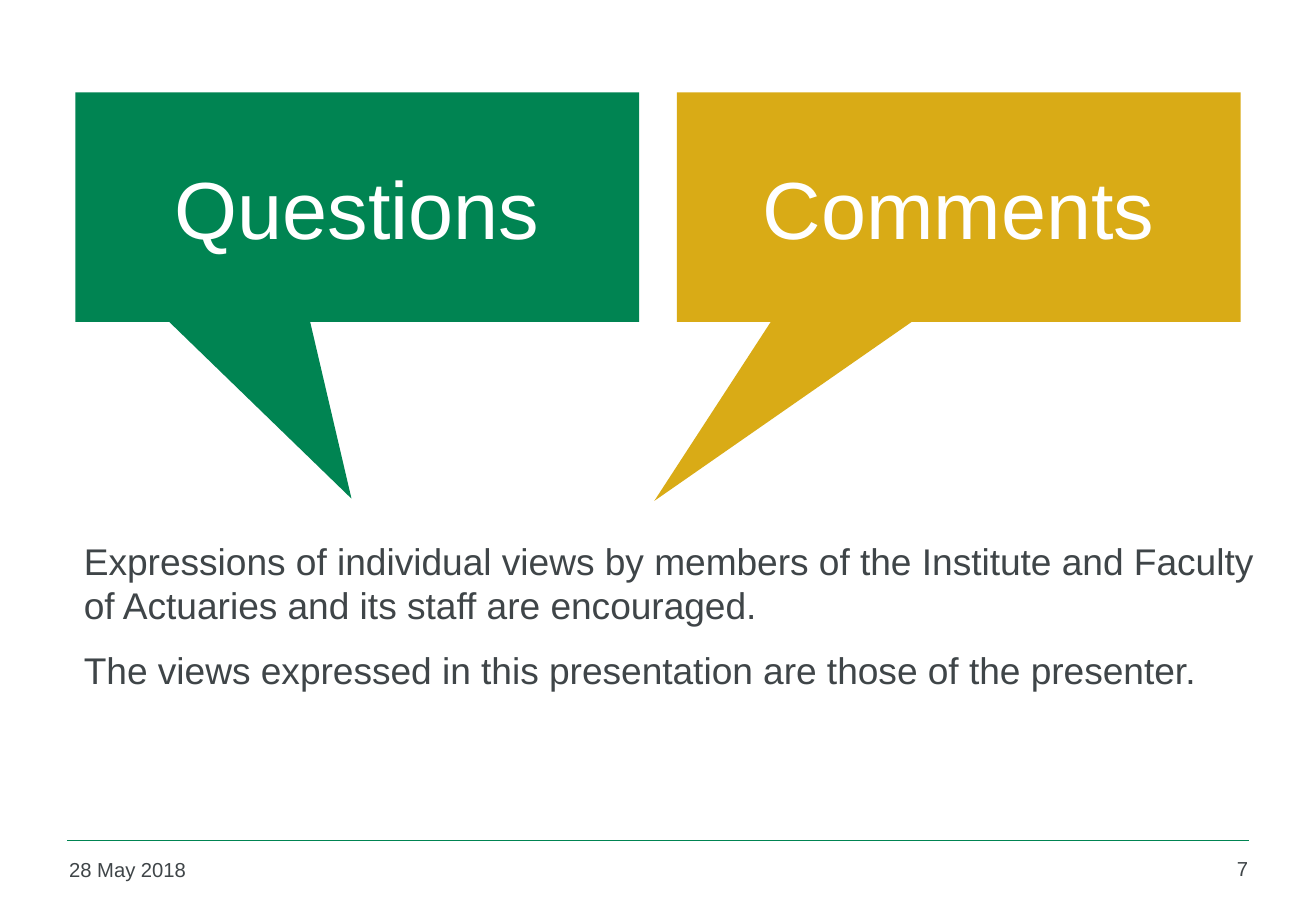
from dataclasses import dataclass

import lxml.etree
import pptx
import pptx.dml.color
import pptx.enum.shapes
import pptx.enum.text
import pptx.oxml.ns
import pptx.presentation
import pptx.shapes.base
import pptx.slide
import pptx.text.text
import pptx.util

RGBColor = pptx.dml.color.RGBColor
ALIGN = pptx.enum.text.PP_ALIGN
ANCHOR = pptx.enum.text.MSO_ANCHOR
GREEN = RGBColor(0x00, 0x84, 0x52)
GOLD = RGBColor(0xD9, 0xAB, 0x16)
GREY = RGBColor(0x3F, 0x45, 0x48)
WHITE = RGBColor(0xFF, 0xFF, 0xFF)
FONT = "Arial"

WIDTH = pptx.util.Inches(10.83)
HEIGHT = pptx.util.Inches(7.5)

DISCLAIMER = (
    "Expressions of individual views by members of the Institute and Faculty "
    "of Actuaries and its staff are encouraged.",
    "The views expressed in this presentation are those of the presenter.",
)


@dataclass(frozen=True)
class Box:
    """A rectangle in percent of the slide's width and height."""
    left: float
    top: float
    width: float
    height: float

    def inset(self, dx: float, dy: float) -> "Box":
        return Box(self.left + dx, self.top + dy,
                   self.width - 2 * dx, self.height - 2 * dy)

    def emu(self) -> tuple[int, int, int, int]:
        return (share(self.left, WIDTH), share(self.top, HEIGHT),
                share(self.width, WIDTH), share(self.height, HEIGHT))


@dataclass(frozen=True)
class Callout:
    """A speech bubble; tip is measured from its centre in its own size."""
    label: str
    fill: RGBColor
    tip: tuple[float, float]


@dataclass(frozen=True)
class Footer:
    text: str
    box: Box
    align: ALIGN


CALLOUTS = (
    Callout("Questions", GREEN, (-0.01, 1.27)),
    Callout("Comments", GOLD, (-0.54, 1.28)),
)
CALLOUT_LEFT, CALLOUT_TOP = 5.72, 10.13
CALLOUT_WIDTH, CALLOUT_HEIGHT = 42.84, 25.2
CALLOUT_PITCH = 45.71

FOOTERS = (
    Footer("28 May 2018", Box(4.34, 93.47, 22.07, 4.8), ALIGN.LEFT),
    Footer("7", Box(88.64, 93.33, 7.11, 4.93), ALIGN.RIGHT),
)
BODY_BOX = Box(5.45, 58.4, 91.87, 34.4)
RULE_LEFT, RULE_RIGHT, RULE_TOP = 5.08, 94.92, 92.27


def share(percent: float, length: int) -> int:
    return round(percent / 100 * length)


def place(sp: pptx.shapes.base.BaseShape, box: Box) -> None:
    sp.left, sp.top, sp.width, sp.height = box.emu()


def format_text(tf: pptx.text.text.TextFrame, size: float, color: RGBColor,
                align: ALIGN, anchor: ANCHOR) -> None:
    tf.word_wrap = True
    tf.auto_size = pptx.enum.text.MSO_AUTO_SIZE.NONE
    tf.vertical_anchor = anchor
    for p in tf.paragraphs:
        p.alignment = align
        for r in p.runs:
            r.font.name = FONT
            r.font.size = pptx.util.Pt(size)
            r.font.color.rgb = color


def add_rule(slide: pptx.slide.Slide) -> None:
    y = share(RULE_TOP, HEIGHT)
    line = slide.shapes.add_connector(
        pptx.enum.shapes.MSO_CONNECTOR.STRAIGHT,
        share(RULE_LEFT, WIDTH), y, share(RULE_RIGHT, WIDTH), y)
    line.line.color.rgb = GREEN
    line.line.width = pptx.util.Pt(1)
    lxml.etree.SubElement(line.element.spPr, pptx.oxml.ns.qn("a:effectLst"))


def add_footer(slide: pptx.slide.Slide, footer: Footer) -> None:
    sp = slide.shapes.add_textbox(*footer.box.emu())
    sp.text_frame.text = footer.text
    format_text(sp.text_frame, 12, GREY, footer.align, ANCHOR.TOP)


def fill_body(slide: pptx.slide.Slide) -> None:
    sp = slide.placeholders[1]
    place(sp, BODY_BOX)
    tf = sp.text_frame
    tf.text = "\n".join(DISCLAIMER)
    for i, p in enumerate(tf.paragraphs):
        p.space_before = pptx.util.Pt(12 if i else 0)
        pPr = p._p.get_or_add_pPr()
        pPr.set("marL", "0")
        pPr.set("indent", "0")
        lxml.etree.SubElement(pPr, pptx.oxml.ns.qn("a:buNone"))
    format_text(tf, 22, GREY, ALIGN.LEFT, ANCHOR.TOP)


def add_callout(slide: pptx.slide.Slide, index: int, callout: Callout) -> None:
    """Draw a bubble; the first one carries the slide title as its label."""
    box = Box(CALLOUT_LEFT + index * CALLOUT_PITCH, CALLOUT_TOP,
              CALLOUT_WIDTH, CALLOUT_HEIGHT)
    sp = slide.shapes.add_shape(
        pptx.enum.shapes.MSO_SHAPE.RECTANGULAR_CALLOUT, *box.emu())
    sp.adjustments[0], sp.adjustments[1] = callout.tip
    sp.fill.solid()
    sp.fill.fore_color.rgb = callout.fill
    sp.line.fill.background()
    sp.shadow.inherit = False

    label_box = box.inset(2.15, 4.27)
    if index == 0:
        label = slide.shapes.title
        place(label, label_box)
        label.element.getparent().append(label.element)
    else:
        label = slide.shapes.add_textbox(*label_box.emu())
    label.text_frame.text = callout.label
    format_text(label.text_frame, 48, WHITE, ALIGN.CENTER, ANCHOR.MIDDLE)


def build() -> pptx.presentation.Presentation:
    prs = pptx.Presentation()
    prs.slide_width, prs.slide_height = WIDTH, HEIGHT
    slide = prs.slides.add_slide(prs.slide_layouts[1])
    add_rule(slide)
    for footer in FOOTERS:
        add_footer(slide, footer)
    fill_body(slide)
    for i, callout in enumerate(CALLOUTS):
        add_callout(slide, i, callout)
    return prs


if __name__ == "__main__":
    build().save("out.pptx")
